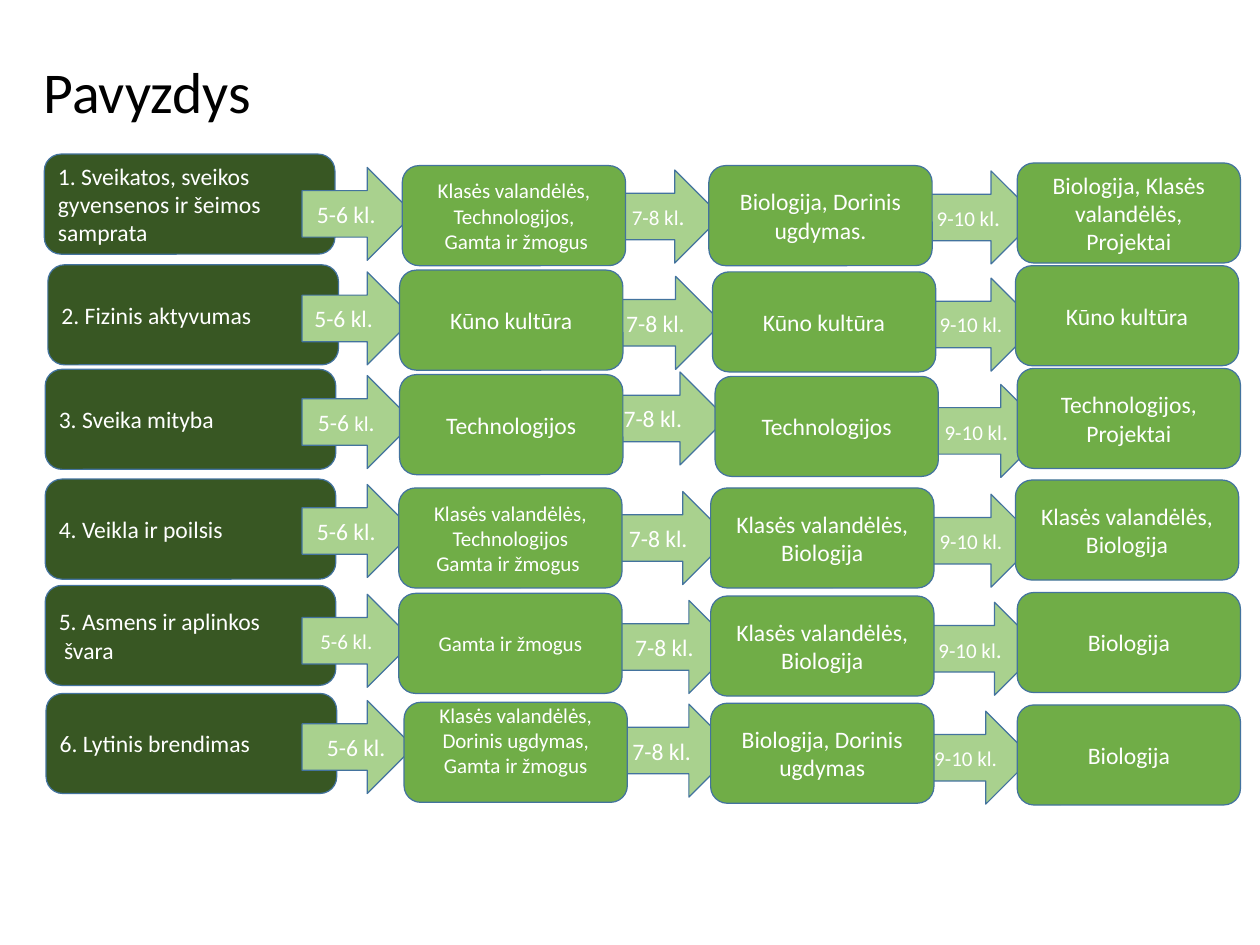
from pptx import Presentation
from pptx.dml.color import RGBColor
from pptx.enum.shapes import MSO_SHAPE as Shape
from pptx.enum.text import MSO_ANCHOR as Anchor, MSO_AUTO_SIZE as AutoSize, PP_ALIGN as Align
from pptx.util import Inches, Pt

COLORS = {"topic": "385723", "subject": "70AD47", "arrow": "A9D18E",
          "outline": "43739E", "light": "FFFFFF", "title": "000000"}
FONT = "Calibri"
LARGE, SMALL = 19.2, 17.1

# Grid: six rows of equal pitch; each part is nudged from its cell
ROW_TOP, ROW_PITCH, BOX_HEIGHT, ARROW_HEIGHT = 1.85, 1.22, 1.13, 1.05

# Topics: (dx, dy, paragraphs)
TOPICS = [
    (0, -.11, ["1. Sveikatos, sveikos gyvensenos ir šeimos samprata"]),
    (.04, -.08, ["2. Fizinis aktyvumas"]),
    (.01, -.12, ["3. Sveika mityba"]),
    (.01, -.10, ["4. Veikla ir poilsis"]),
    (.01, -.12, ["5. Asmens ir aplinkos", " švara"]),
    (.02, -.12, ["6. Lytinis brendimas"]),
]

# Subjects by class group: (dx, dy, paragraphs, size)
SUBJECTS_5_6 = [
    (.04, .02, ["Klasės valandėlės, Technologijos,", " Gamta ir žmogus"], SMALL),
    (.01, -.02, ["Kūno kultūra"], LARGE),
    (.01, -.06, ["Technologijos"], LARGE),
    (0, 0, ["Klasės valandėlės, Technologijos", "Gamta ir žmogus "], SMALL),
    (0, -.03, ["Gamta ir žmogus"], SMALL),
    (.06, -.02, ["Klasės valandėlės, Dorinis ugdymas, Gamta ir žmogus"], SMALL, .28),
]
SUBJECTS_7_8 = [
    (0, .02, ["Biologija, Dorinis ugdymas."], LARGE),
    (.04, 0, ["Kūno kultūra"], LARGE),
    (.07, -.04, ["Technologijos"], LARGE),
    (.02, 0, ["Klasės valandėlės, Biologija"], LARGE),
    (.02, 0, ["Klasės valandėlės, Biologija"], LARGE),
    (.02, -.01, ["Biologija, Dorinis ugdymas"], LARGE),
]
SUBJECTS_9_10 = [
    (.02, -.01, ["Biologija, Klasės valandėlės, Projektai"], LARGE),
    (0, -.07, ["Kūno kultūra"], LARGE),
    (.02, -.13, ["Technologijos, Projektai"], LARGE),
    (0, -.09, ["Klasės valandėlės, Biologija"], LARGE),
    (.02, -.04, ["Biologija"], LARGE),
    (.02, .01, ["Biologija"], LARGE),
]

# Arrow labels as runs of (text, size)
CLASS_5_6 = [("5-6 kl.", LARGE)]
CLASS_7_8 = [("7-8 kl.", LARGE)]
CLASS_9_10 = [("9-10 kl.", SMALL)]
CLASS_9_10_STOP = [("9-10 kl", SMALL), (".", LARGE)]

# Arrows: (dx, dy, label, shift of the label)
ARROWS_5_6 = [
    (0, .04, CLASS_5_6, 0),
    (0, 0, CLASS_5_6, -.03),
    (0, -.05, [("5-6 ", LARGE), ("kl", SMALL), (".", LARGE)], 0),
    (0, -.04, CLASS_5_6, 0),
    (0, -.02, [("5-6 kl.", SMALL)], 0),
    (0, -.04, None, 0),
]
ARROWS_7_8 = [
    (0, .07, [("7-8 kl", SMALL), (".", LARGE)], .09),
    (.01, .05, CLASS_7_8, .05),
    (.06, -.09, CLASS_7_8, -.03),
    (.09, .04, CLASS_7_8, 0),
    (.16, .05, CLASS_7_8, 0),
    (.16, 0, CLASS_7_8, -.03),
]
ARROWS_9_10 = [
    (.06, .08, CLASS_9_10_STOP, .02),
    (.06, .07, CLASS_9_10, .05),
    (.17, .05, CLASS_9_10_STOP, 0),
    (.06, .07, CLASS_9_10, .05),
    (.10, .07, CLASS_9_10_STOP, 0),
    (0, .08, CLASS_9_10, .05),
]


def write_text(shape, paragraphs, size=LARGE, color="light", align=Align.CENTER,
               insets=(.1, .05, .1, .05), spacing=None):
    """Each paragraph is a string or a list of (text, size) runs."""
    frame = shape.text_frame
    frame.word_wrap = True
    frame.auto_size = AutoSize.NONE
    frame.vertical_anchor = Anchor.MIDDLE
    (frame.margin_left, frame.margin_top,
     frame.margin_right, frame.margin_bottom) = [Inches(inset) for inset in insets]
    for index, content in enumerate(paragraphs):
        paragraph = frame.paragraphs[0] if index == 0 else frame.add_paragraph()
        paragraph.alignment = align
        if spacing:
            paragraph.line_spacing = spacing
        runs = [(content, size)] if isinstance(content, str) else content
        for text, run_size in runs:
            run = paragraph.add_run()
            run.text = text
            run.font.name = FONT
            run.font.size = Pt(run_size)
            run.font.color.rgb = RGBColor.from_string(COLORS[color])


def add_part(slide, kind, box, fill):
    shape = slide.shapes.add_shape(kind, *[Inches(length) for length in box])
    shape.shadow.inherit = False
    shape.fill.solid()
    shape.fill.fore_color.rgb = RGBColor.from_string(COLORS[fill])
    shape.line.color.rgb = RGBColor.from_string(COLORS["outline"])
    shape.line.width = Pt(1)
    return shape


def cell(row, left, dx, dy, width, height):
    return left + dx, ROW_TOP + row * ROW_PITCH + dy, width, height


def draw_topics(slide, left, width):
    for row, (dx, dy, paragraphs) in enumerate(TOPICS):
        box = cell(row, left, dx, dy, width, BOX_HEIGHT)
        shape = add_part(slide, Shape.FLOWCHART_ALTERNATE_PROCESS, box, "topic")
        write_text(shape, paragraphs, align=Align.LEFT)


def draw_subjects(slide, left, width, subjects):
    for row, (dx, dy, paragraphs, size, *raised) in enumerate(subjects):
        box = cell(row, left, dx, dy, width, BOX_HEIGHT)
        shape = add_part(slide, Shape.FLOWCHART_ALTERNATE_PROCESS, box, "subject")
        insets = (.1, 0, .1, raised[0] if raised else 0)
        write_text(shape, paragraphs, size=size, insets=insets)


def draw_arrows(slide, left, width, arrows):
    for row, (dx, dy, label, shift) in enumerate(arrows):
        box = cell(row, left, dx, dy, width, ARROW_HEIGHT)
        shape = add_part(slide, Shape.RIGHT_ARROW, box, "arrow")
        if label:
            insets = (max(2 * shift, 0), 0, max(-2 * shift, 0), 0)
            write_text(shape, [label], insets=insets)


def draw_title(slide, box):
    title = slide.shapes.title
    title.left, title.top, title.width, title.height = [Inches(length) for length in box]
    write_text(title, ["Pavyzdys"], size=46.9, color="title", align=Align.LEFT, spacing=.9)


def draw_last_label(slide, box):
    label = slide.shapes.add_textbox(*[Inches(length) for length in box])
    write_text(label, [CLASS_5_6], align=Align.LEFT)


def main():
    presentation = Presentation()
    presentation.slide_width, presentation.slide_height = Inches(14.22), Inches(10.67)
    slide = presentation.slides.add_slide(presentation.slide_layouts[5])

    draw_title(slide, (.39, .04, 12.27, 2.06))
    # Later arrows lie behind the boxes, the first ones over the topics
    draw_arrows(slide, 10.31, 1.34, ARROWS_9_10)
    draw_arrows(slide, 6.8, 1.34, ARROWS_7_8)
    draw_topics(slide, .5, 3.28)
    draw_arrows(slide, 3.41, 1.26, ARROWS_5_6)
    for left, subjects in ((4.5, SUBJECTS_5_6), (8, SUBJECTS_7_8), (11.46, SUBJECTS_9_10)):
        draw_subjects(slide, left, 2.52, subjects)
    draw_last_label(slide, (3.59, 8.22, .92, .42))

    presentation.save("out.pptx")


if __name__ == "__main__":
    main()
